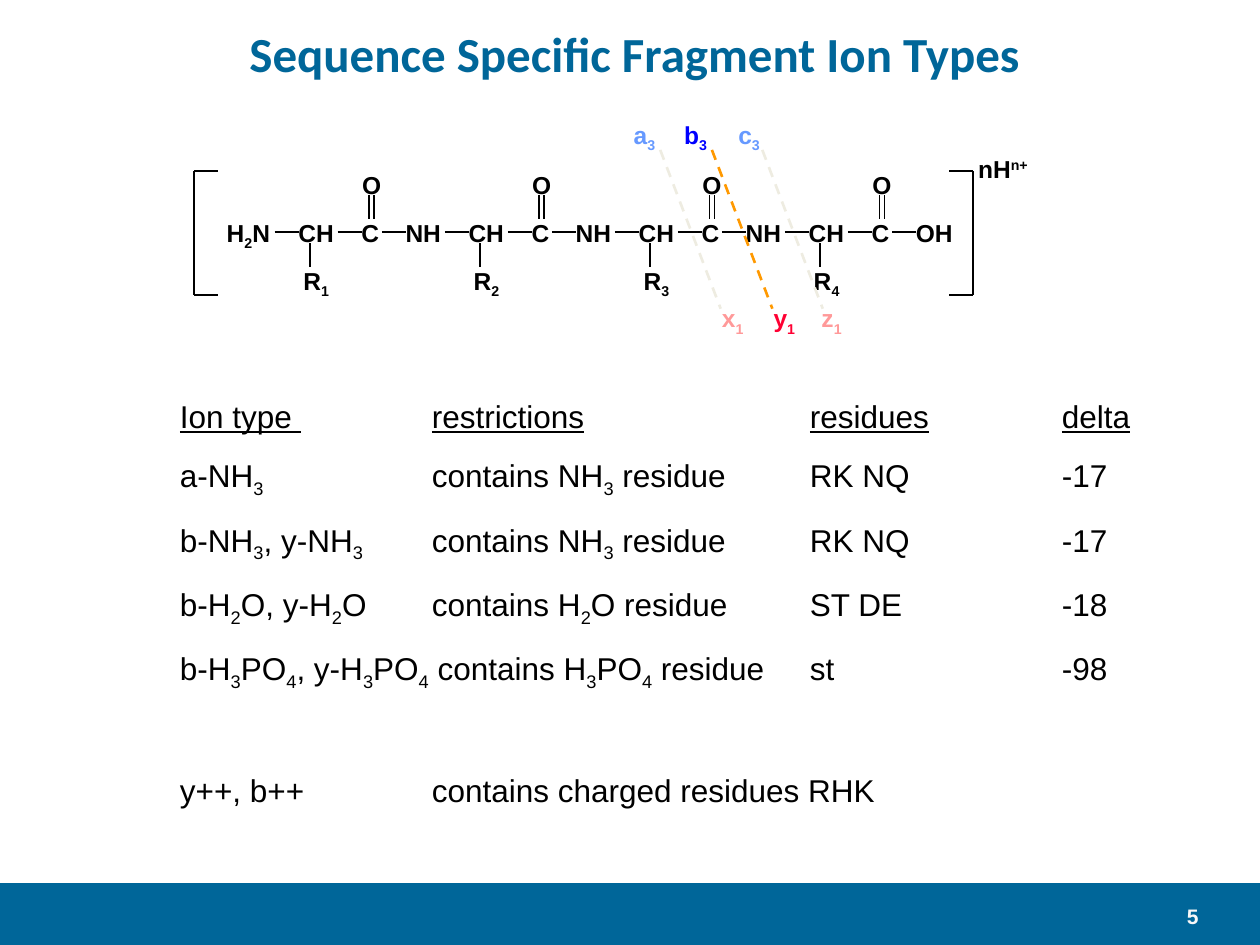
from dataclasses import dataclass

from lxml import etree
from pptx import Presentation
from pptx.dml.color import RGBColor
from pptx.enum import dml, shapes, text
from pptx.oxml import ns
from pptx.util import Inches, Pt


@dataclass(frozen=True)
class Theme:
    blue: str = "006699"
    black: str = "000000"
    pale: str = "F8F8F8"
    cut: str = "FF9900"
    faint: str = "EEECE1"
    head: str = "Calibri"
    body: str = "Arial"
    title: int = 28
    table: int = 18
    atom: int = 14
    page: int = 12


THEME = Theme()
ALIGN = text.PP_ALIGN
PITCH = 1.35  # width of one residue
COUNT = 4
BOND = 0.19
SUB, SUPER = -25, 30

# label, left, top, width, colour
IONS = [
    ("a~3", 4.92, 0.9, 0.39, "6699FF"),
    ("b~3", 5.32, 0.9, 0.4, "0000FF"),
    ("c~3", 5.75, 0.9, 0.39, "6699FF"),
    ("x~1", 5.62, 2.36, 0.39, "FF9999"),
    ("y~1", 6.03, 2.36, 0.39, "FF0033"),
    ("z~1", 6.41, 2.36, 0.38, "FF9999"),
]
CUTS = [(5.24, THEME.faint), (5.65, THEME.cut), (6.05, THEME.faint)]
ROWS = [
    "Ion type \trestrictions\tresidues\tdelta",
    "a-NH~3~\tcontains NH~3~ residue\tRK NQ\t-17",
    "b-NH~3~, y-NH~3~\tcontains NH~3~ residue\tRK NQ\t-17",
    "b-H~2~O, y-H~2~O\tcontains H~2~O residue\tST DE\t-18",
    "b-H~3~PO~4~, y-H~3~PO~4~ contains H~3~PO~4~ residue\tst\t-98",
    "y++, b++\tcontains charged residues RHK",
]


def style(run, size, color, bold=True, face=THEME.body):
    font = run.font
    font.name, font.size, font.bold = face, Pt(size), bold
    font.color.rgb = RGBColor.from_string(color)


def write(para, words, size, color, bold=True, base=SUB):
    """Fill a paragraph; each ~ switches the shifted baseline on or off."""
    for i, part in enumerate(words.split("~")):
        if part:
            run = para.add_run()
            run.text = part
            style(run, size, color, bold)
            if i % 2:
                run.font._element.set("baseline", f"{base * 1000}")


def set_tabs(para, stops):
    tabs = etree.SubElement(para._p.get_or_add_pPr(), ns.qn("a:tabLst"))
    for stop in stops:
        etree.SubElement(tabs, ns.qn("a:tab"), pos=str(Inches(stop)), algn="l")


def add_box(slide, left, top, width, height, wrap=False):
    box = slide.shapes.add_textbox(
        Inches(left), Inches(top), Inches(width), Inches(height))
    box.text_frame.word_wrap = wrap
    return box.text_frame


def add_label(slide, words, left, top, width, color=THEME.black, base=SUB):
    para = add_box(slide, left, top, width, 0.34).paragraphs[0]
    para.alignment = ALIGN.CENTER
    write(para, words, THEME.atom, color, base=base)


def add_line(slide, x1, y1, x2, y2, color=THEME.black, width=1, dash=False):
    line = slide.shapes.add_connector(
        shapes.MSO_CONNECTOR.STRAIGHT,
        Inches(x1), Inches(y1), Inches(x2), Inches(y2))
    line.line.color.rgb = RGBColor.from_string(color)
    line.line.width = Pt(width)
    if dash:
        line.line.dash_style = dml.MSO_LINE.DASH
    etree.SubElement(line._element.spPr, ns.qn("a:effectLst"))


def add_title(slide):
    title = slide.shapes.title
    title.left, title.top = Inches(0.17), Inches(0.17)
    title.width, title.height = Inches(9.73), Inches(0.5)
    frame = title.text_frame
    frame.text = "Sequence Specific Fragment Ion Types"
    frame.vertical_anchor = text.MSO_ANCHOR.MIDDLE
    para = frame.paragraphs[0]
    para.alignment = ALIGN.CENTER
    style(para.runs[0], THEME.title, THEME.blue, face=THEME.head)


def add_footer(slide):
    bar = slide.shapes.add_shape(
        shapes.MSO_SHAPE.RECTANGLE,
        Inches(0), Inches(7.01), Inches(10), Inches(0.49))
    bar.shadow.inherit = False
    bar.fill.solid()
    bar.fill.fore_color.rgb = RGBColor.from_string(THEME.blue)
    bar.line.fill.background()
    para = add_box(slide, 8.92, 7.12, 0.69, 0.25, wrap=True).paragraphs[0]
    para.alignment = ALIGN.RIGHT
    write(para, "5", THEME.page, THEME.pale)


def add_chain(slide):
    """Draw the backbone atoms, side groups and bonds of the peptide."""
    para = add_box(slide, 1.7, 1.68, 6.02, 0.34, wrap=True).paragraphs[0]
    set_tabs(para, [start + PITCH * i for i in range(COUNT)
                    for start in (0.57, 1.07, 1.42)])
    units = "\tNH".join(["\tCH\tC"] * COUNT)
    write(para, f"H~2~N{units}\tOH", THEME.atom, THEME.black)

    for i in range(COUNT):
        shift = PITCH * i
        add_label(slide, f"R~{i + 1}", 2.3 + shift, 2.06, 0.42)
        add_label(slide, "O", 2.77 + shift, 1.3, 0.36)
        for x in (2.18, 2.68, 3.03):
            add_line(slide, x + shift, 1.84, x + shift + BOND, 1.84)
        for x, y in ((2.46, 1.93), (2.93, 1.55), (2.97, 1.55)):
            add_line(slide, x + shift, y, x + shift, y + BOND)


def add_bracket(slide, x, tip):
    add_line(slide, x, 1.36, x, 2.34)
    for y in (1.36, 2.34):
        add_line(slide, x, y, x + tip, y)


def add_rows(slide):
    frame = add_box(slide, 1.33, 2.95, 7.82, 3.28, wrap=True)
    for i, row in enumerate(ROWS):
        para = frame.add_paragraph() if i else frame.paragraphs[0]
        para.line_spacing = 1.5
        set_tabs(para, (2, 5, 7))
        write(para, row, THEME.table, THEME.black, bold=False)
    frame.paragraphs[0].runs[0].font.underline = True
    para.space_before = Pt(34)


def main():
    deck = Presentation()
    deck.slide_width, deck.slide_height = Inches(10), Inches(7.5)
    slide = deck.slides.add_slide(deck.slide_layouts[5])
    add_footer(slide)
    add_title(slide)
    add_chain(slide)
    add_bracket(slide, 1.54, BOND)
    add_bracket(slide, 7.72, -BOND)
    add_label(slide, "nH~n+", 7.65, 1.17, 0.62, base=SUPER)
    for x, color in CUTS:
        add_line(slide, x, 1.19, x + 0.48, 2.45, color, 1.5, dash=True)
    for ion in IONS:
        add_label(slide, *ion)
    add_rows(slide)
    deck.save("out.pptx")


if __name__ == "__main__":
    main()
